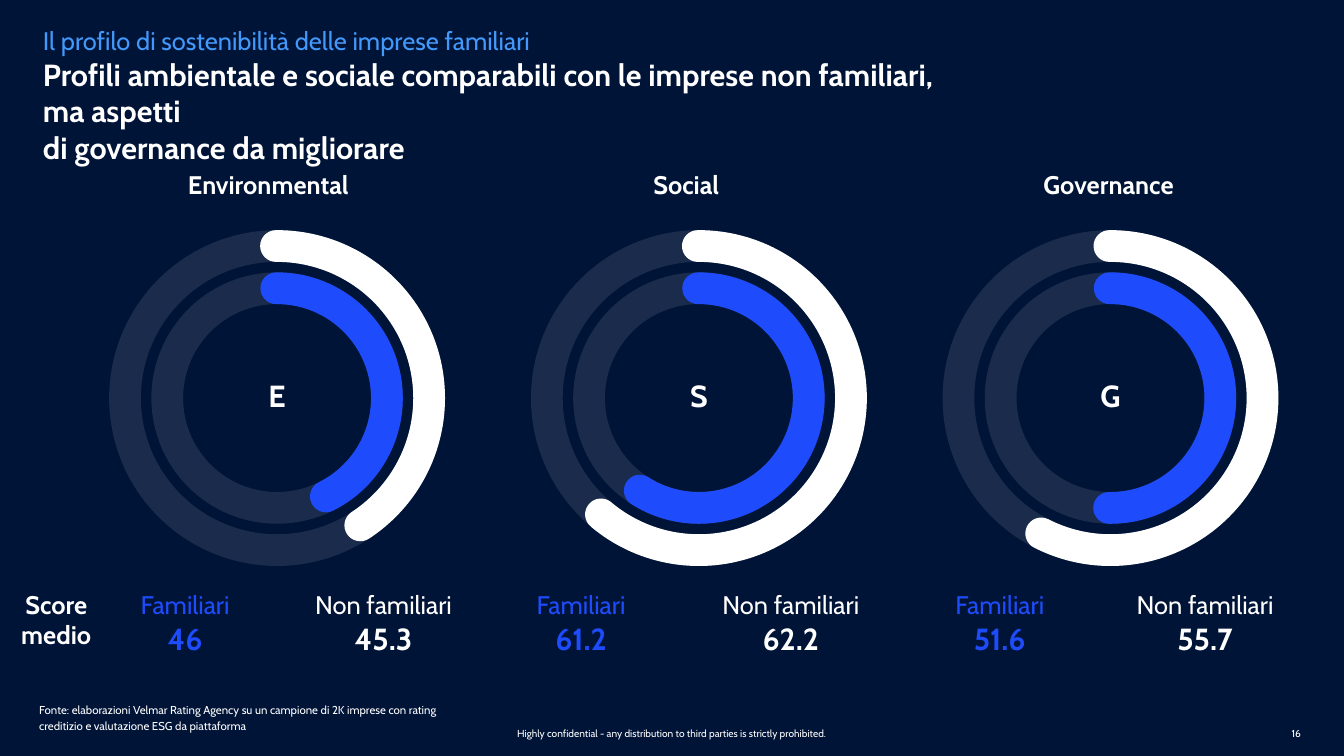
from lxml import etree
from pptx import Presentation
from pptx.dml.color import RGBColor
from pptx.enum.shapes import MSO_SHAPE
from pptx.enum.text import MSO_ANCHOR, MSO_AUTO_SIZE, PP_ALIGN
from pptx.oxml.ns import qn
from pptx.util import Pt

CIRCLE, ARC = MSO_SHAPE.FLOWCHART_CONNECTOR, MSO_SHAPE.ARC
TOP, MIDDLE, BOTTOM = MSO_ANCHOR.TOP, MSO_ANCHOR.MIDDLE, MSO_ANCHOR.BOTTOM
LEFT, CENTER, RIGHT = PP_ALIGN.LEFT, PP_ALIGN.CENTER, PP_ALIGN.RIGHT
NO_FIT = MSO_AUTO_SIZE.NONE

COLORS = {"navy": "001437", "white": "FFFFFF", "blue": "1E4CFC", "sky": "4399FB"}
FONT = "Cabin"
OUTER, INNER, DISC = 239.5, 173, 130  # diameters
RING_WIDTH = 25
ARC_START = 269.6  # degrees, clockwise from three o'clock
GAUGE_MIDDLE = 313.5

# Horizontal centres, scores and arc end angles of each pillar
PILLARS = [
    {"name": "Environmental", "letter": "E", "heading": 211.3, "gauge": 218.2,
     "family": (145.8, "46", 63.62), "other": (302, "45.3", 56.83)},
    {"name": "Social", "letter": "S", "heading": 540.4, "gauge": 550.4,
     "family": (457.6, "61.2", 122.57), "other": (622.8, "62.2", 130.09)},
    {"name": "Governance", "letter": "G", "heading": 873, "gauge": 874.5,
     "family": (787.3, "51.6", 90.72), "other": (949, "55.7", 117.1)},
]


def rgb(color):
    return RGBColor.from_string(COLORS[color])


def write(shape, lines, align=LEFT, anchor=TOP, inset=(0, 0), spacing=1.0):
    """Fill a shape with lines of (text, size, bold, colour)."""
    frame = shape.text_frame
    settings = {"word_wrap": True, "auto_size": NO_FIT, "vertical_anchor": anchor,
                "margin_left": Pt(inset[0]), "margin_right": Pt(inset[0]),
                "margin_top": Pt(inset[1]), "margin_bottom": Pt(inset[1])}
    for name, value in settings.items():
        setattr(frame, name, value)
    for index, (text, size, bold, color) in enumerate(lines):
        para = frame.paragraphs[0] if index == 0 else frame.add_paragraph()
        para.text = text
        layout = {"alignment": align, "line_spacing": spacing,
                  "space_before": Pt(0), "space_after": Pt(0)}
        for name, value in layout.items():
            setattr(para, name, value)
        for span in para.runs:
            for name, value in {"name": FONT, "size": Pt(size), "bold": bold}.items():
                setattr(span.font, name, value)
            span.font.color.rgb = rgb(color)


def add_text(page, box, lines, **options):
    shape = page.shapes.add_textbox(*map(Pt, box))
    write(shape, lines, **options)


def add_round(page, kind, center, diameter, color=None):
    """Add an unfilled round shape, with a thick outline if a colour is given."""
    left, top = (middle - diameter / 2 for middle in center)
    shape = page.shapes.add_shape(kind, *map(Pt, (left, top, diameter, diameter)))
    shape.shadow.inherit = False
    shape.fill.background()
    if color:
        shape.line.color.rgb = rgb(color)
        shape.line.width = Pt(RING_WIDTH)
    else:
        shape.line.fill.background()
    return shape


def add_ring(page, center, diameter, end, color):
    # Translucent track
    track = add_round(page, CIRCLE, center, diameter, "white")
    tint = track.element.spPr.find(qn("a:ln")).find(".//" + qn("a:srgbClr"))
    etree.SubElement(tint, qn("a:alpha")).set("val", "10000")

    # Round-ended score arc; adjustments count 0.6 per degree
    arc = add_round(page, ARC, center, diameter, color)
    for index, angle in enumerate((ARC_START, end)):
        arc.adjustments[index] = angle * 0.6
    arc.element.spPr.find(qn("a:ln")).set("cap", "rnd")


def add_header(page, box):
    left, top, width, height = box
    subtitle_height = 24

    # Title
    title = page.shapes.title
    write(title, [("Profili ambientale e sociale comparabili con le imprese non familiari, "
                   "ma aspetti\vdi governance da migliorare", 24, True, "white")])

    # Line above the title
    subtitle = page.placeholders[1]
    para_format = subtitle.text_frame.paragraphs[0]._p.get_or_add_pPr()
    para_format.set("marL", "0")
    para_format.set("indent", "0")
    etree.SubElement(para_format, qn("a:buNone"))
    write(subtitle, [("Il profilo di sostenibilità delle imprese familiari", 20, False, "sky")],
          anchor=BOTTOM, spacing=1.1)

    places = [(subtitle, top, subtitle_height),
              (title, top + subtitle_height, height - subtitle_height)]
    for shape, shape_top, shape_height in places:
        place = {"left": left, "top": shape_top, "width": width, "height": shape_height}
        for name, value in place.items():
            setattr(shape, name, Pt(value))


def add_pillar(page, pillar, top):
    # Heading
    add_text(page, (pillar["heading"] - 120, top, 240, 31.5),
             [(pillar["name"], 20, True, "white")], align=CENTER, inset=(7.2, 3.6))

    # Gauge
    center = (pillar["gauge"], GAUGE_MIDDLE)
    disc = add_round(page, CIRCLE, center, DISC)
    write(disc, [(pillar["letter"], 24, True, "white")],
          align=CENTER, anchor=MIDDLE, spacing=0.9)
    add_ring(page, center, OUTER, pillar["other"][2], "white")
    add_ring(page, center, INNER, pillar["family"][2], "blue")

    # Scores
    for key, label, width, color in (("family", "Familiari", 109, "blue"),
                                     ("other", "Non familiari", 144, "white")):
        middle, score, _ = pillar[key]
        add_text(page, (middle - width / 2, top + 330.5, width, 60.5),
                 [(label, 20, False, color), (score, 24, True, color)],
                 align=CENTER, anchor=MIDDLE, inset=(7.2, 3.6))


def add_footer(page, box):
    left, top, width, height = box
    add_text(page, (left, top, 353.5, 31),
             [("Fonte: elaborazioni Velmar Rating Agency su un campione di 2K imprese con "
               "rating creditizio e valutazione ESG da piattaforma", 9, False, "white")],
             inset=(7.2, 3.6), spacing=1.1)
    line_top = top + height - 8
    add_text(page, (251.3, line_top, 555.8, 8),
             [("Highly confidential - any distribution to third parties is strictly "
               "prohibited.", 8, False, "white")],
             align=CENTER, anchor=MIDDLE, spacing=0.9)
    add_text(page, (left + width - 53.3, line_top, 53.3, 8), [("16", 8, False, "white")],
             align=RIGHT, anchor=MIDDLE, spacing=0.9)


def main():
    deck = Presentation()
    deck.slide_width, deck.slide_height = Pt(1058.4), Pt(595.4)
    page = deck.slides.add_slide(deck.slide_layouts[1])
    page.background.fill.solid()
    page.background.fill.fore_color.rgb = rgb("navy")

    add_header(page, (33.8, 20, 708.5, 112))
    for pillar in PILLARS:
        add_pillar(page, pillar, 129.6)

    # Row label of the scores
    add_text(page, (0, 460, 88.6, 55.5),
             [("Score", 20, True, "white"), ("medio", 20, True, "white")],
             align=CENTER, anchor=MIDDLE, inset=(7.2, 3.6))
    add_footer(page, (23.8, 549.4, 1000.8, 33.2))
    deck.save("out.pptx")


if __name__ == "__main__":
    main()
